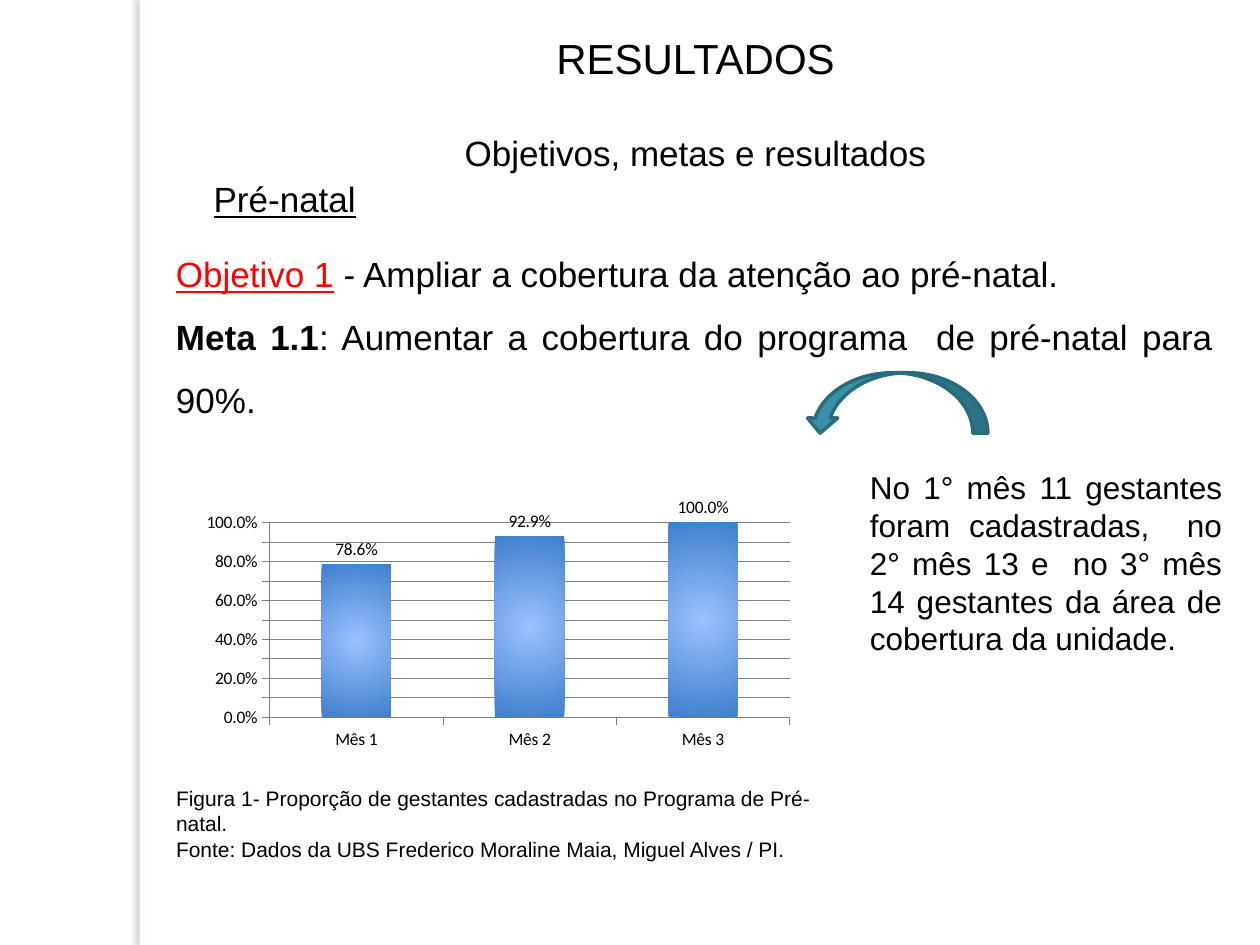
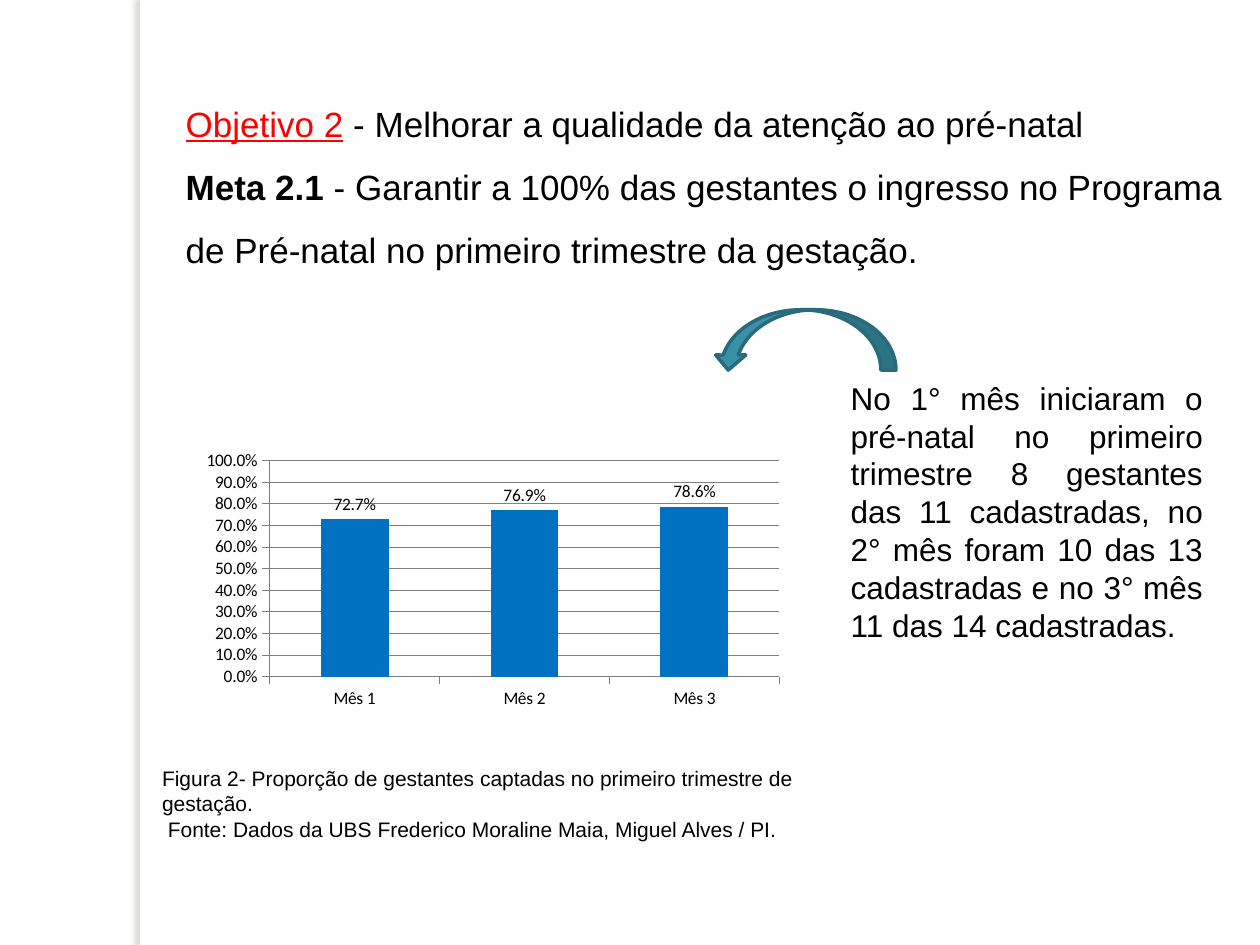
from dataclasses import dataclass

from lxml import etree
from pptx import Presentation
from pptx.chart.data import CategoryChartData
from pptx.dml.color import RGBColor
from pptx.enum.chart import XL_CHART_TYPE, XL_LABEL_POSITION, XL_TICK_MARK
from pptx.enum.shapes import MSO_SHAPE
from pptx.enum.text import MSO_AUTO_SIZE, PP_ALIGN
from pptx.oxml import parse_xml
from pptx.oxml.ns import nsdecls, qn
from pptx.util import Pt

LEFT, CENTER, JUSTIFY = PP_ALIGN.LEFT, PP_ALIGN.CENTER, PP_ALIGN.JUSTIFY
GROW = MSO_AUTO_SIZE.SHAPE_TO_FIT_TEXT
RECT, ARROW = MSO_SHAPE.RECTANGLE, MSO_SHAPE.CURVED_DOWN_ARROW
COLUMNS = XL_CHART_TYPE.COLUMN_CLUSTERED
LABEL_OUT = XL_LABEL_POSITION.OUTSIDE_END
TICK_OUT, TICK_NONE = XL_TICK_MARK.OUTSIDE, XL_TICK_MARK.NONE


@dataclass(frozen=True)
class Theme:
    """Colours, fonts and type sizes shared by the slides."""
    black: RGBColor = RGBColor(0, 0, 0)
    white: RGBColor = RGBColor(0xFF, 0xFF, 0xFF)
    red: RGBColor = RGBColor(0xFF, 0, 0)
    teal: RGBColor = RGBColor(0x38, 0x91, 0xA7)
    teal_dark: RGBColor = RGBColor(0x29, 0x6B, 0x7C)
    grid: RGBColor = RGBColor(0x80, 0x80, 0x80)
    bar: RGBColor = RGBColor(0, 0x70, 0xC0)
    bar_glow: tuple = ("9BC1FF", "3F80CD")
    shadow: str = "736F63"
    font: str = "Arial"
    chart_font: str = "Calibri"
    title: int = 24
    body: int = 20
    note: int = 18
    caption: int = 12
    chart: int = 10


T = Theme()
GOAL = {"underline": True, "color": T.red}
BOLD = {"bold": True}
SOURCE = "Fonte: Dados da UBS Frederico Moraline Maia, Miguel Alves / PI."
MONTHS = ("Mês 1", "Mês 2", "Mês 3")


def set_attrs(obj, fmt):
    """Set each attribute named in a dict of format values."""
    for name, value in fmt.items():
        setattr(obj, name, value)


def set_font(font, name, size, color=T.black, **fmt):
    """Set the face, size, colour and other values of a font."""
    set_attrs(font, {"name": name, "size": Pt(size), **fmt})
    font.color.rgb = color


def set_line(line, color, width):
    """Set the colour and width of a line."""
    line.color.rgb = color
    line.width = Pt(width)


def add_text(s, box, paragraphs, size, wrap=True, **fmt):
    """Add a text box whose paragraphs are lists of (text, format) runs."""
    tf = s.shapes.add_textbox(*map(Pt, box)).text_frame
    set_attrs(tf, {"word_wrap": wrap, "auto_size": GROW})
    for i, runs in enumerate(paragraphs):
        p = tf.add_paragraph() if i else tf.paragraphs[0]
        set_attrs(p, fmt)
        for text, run_fmt in runs:
            r = p.add_run()
            r.text = text
            set_font(r.font, T.font, **{"size": size, **run_fmt})
    return tf


def add_band_edge(s, box):
    """Add the white strip that throws a soft shadow to its left."""
    sp = s.shapes.add_shape(RECT, *map(Pt, box))
    sp.shadow.inherit = False
    sp.fill.solid()
    sp.fill.fore_color.rgb = T.white
    sp.line.fill.background()
    effects = sp._element.spPr.find(qn("a:effectLst"))
    shadow = etree.SubElement(effects, qn("a:outerShdw"), blurRad=str(Pt(3)),
                              dist=str(Pt(3)), dir="10800000", algn="tl", rotWithShape="0")
    color = etree.SubElement(shadow, qn("a:srgbClr"), val=T.shadow)
    etree.SubElement(color, qn("a:alpha"), val="25000")


def add_heading(s, box):
    """Add the section title with its subtitle and topic below."""
    x, y, w, h = box
    lines = [[("RESULTADOS", {"size": T.title})], [("Objetivos, metas e resultados", {})]]
    tf = add_text(s, box, lines, T.body, wrap=False, alignment=CENTER)
    tf.paragraphs[1].space_before = Pt(27.6)
    add_text(s, (x - 142.5, y + h - 6.5, 96.5, 31.5),
             [[("Pré-natal", {"underline": True})]], T.body, wrap=False)


def add_arrow(s, box):
    """Add the curved arrow that leads from the note to the chart."""
    sp = s.shapes.add_shape(ARROW, *map(Pt, box))
    sp.shadow.inherit = False
    sp.fill.solid()
    sp.fill.fore_color.rgb = T.teal
    set_line(sp.line, T.teal_dark, 2)
    sp._element.spPr.find(qn("a:xfrm")).set("flipH", "1")


def glow_fill(center, edge):
    """Return a gradient fill that darkens from its centre to its edges."""
    return parse_xml(
        f'<a:gradFill {nsdecls("a")} rotWithShape="1"><a:gsLst>'
        f'<a:gs pos="0"><a:srgbClr val="{center}"/></a:gs>'
        f'<a:gs pos="100000"><a:srgbClr val="{edge}"/></a:gs></a:gsLst>'
        '<a:path path="circle"><a:fillToRect l="50000" t="50000" r="50000" b="50000"/>'
        '</a:path></a:gradFill>')


def set_plot_area(chart, area):
    """Fix the inner plot area to fractions of the chart."""
    plot_area = chart._chartSpace.chart.plotArea
    for old in plot_area.findall(qn("c:layout")):
        plot_area.remove(old)
    layout = etree.Element(qn("c:layout"))
    manual = etree.SubElement(layout, qn("c:manualLayout"))
    values = [("layoutTarget", "inner"), ("xMode", "edge"), ("yMode", "edge")]
    for tag, value in values + list(zip("xywh", area)):
        etree.SubElement(manual, qn(f"c:{tag}"), val=str(value))
    plot_area.insert(0, layout)


def add_columns(s, box, values, area, glow):
    """Add the column chart of monthly proportions."""
    data = CategoryChartData(number_format="0.0%")
    data.categories = MONTHS
    data.add_series("Series 1", values)
    chart = s.shapes.add_chart(COLUMNS, *map(Pt, box), data).chart
    set_attrs(chart, {"has_title": False, "has_legend": False})
    set_font(chart.font, T.chart_font, T.chart)
    set_plot_area(chart, area)
    for axis in (chart.category_axis, chart.value_axis):
        set_attrs(axis, {"major_tick_mark": TICK_OUT, "minor_tick_mark": TICK_NONE})
        set_font(axis.tick_labels.font, T.chart_font, T.chart)
        set_line(axis.format.line, T.grid, 0.25)
    set_attrs(axis, {"minimum_scale": 0, "maximum_scale": 1, "major_unit": 0.1,
                     "has_major_gridlines": True})
    set_line(axis.major_gridlines.format.line, T.grid, 0.25)
    number = {"number_format": "0.0%", "number_format_is_linked": False}
    set_attrs(axis.tick_labels, number)
    plot = chart.plots[0]
    set_attrs(plot, {"gap_width": 150, "vary_by_categories": False, "has_data_labels": True})
    set_attrs(plot.data_labels, {**number, "show_value": True, "position": LABEL_OUT})
    set_font(plot.data_labels.font, T.chart_font, T.chart)
    series = plot.series[0]
    series.invert_if_negative = False
    fill = series.format.fill
    fill.solid()
    fill.fore_color.rgb = T.bar
    if glow:
        sppr = series._element.find(qn("c:spPr"))
        sppr.replace(sppr.find(qn("a:solidFill")), glow_fill(*T.bar_glow))


def add_result_slide(prs, goal, note, arrow, figure, caption, heading=None):
    """Add a slide with a goal, its chart and a note on the chart."""
    s = prs.slides.add_slide(prs.slide_layouts[6])
    add_band_edge(s, (80, 0, 6, 540))
    if heading:
        add_heading(s, heading)
    add_text(s, goal["box"], goal["lines"], T.body,
             alignment=goal["alignment"], line_spacing=1.5)
    add_text(s, caption["box"], [[(line, {})] for line in caption["lines"]], T.caption)
    add_text(s, note["box"], [[(note["text"], {})]], T.note, alignment=JUSTIFY)
    add_arrow(s, arrow)
    add_columns(s, **figure)


def main():
    """Build the two result slides and save them."""
    prs = Presentation()
    set_attrs(prs, {"slide_width": Pt(720), "slide_height": Pt(540)})
    add_result_slide(
        prs,
        heading=(257.5, 15, 280, 89.5),
        goal={"box": (93.5, 129, 607, 116.5), "alignment": JUSTIFY, "lines": [
            [("Objetivo 1", GOAL), (" - Ampliar a cobertura da atenção ao pré-natal.", {})],
            [("Meta 1.1", BOLD),
             (": Aumentar a cobertura do programa  de pré-natal para 90%.", {})]]},
        note={"box": (490, 264, 215.5, 116), "text":
              "No 1° mês 11 gestantes foram cadastradas,  no 2° mês 13 e  no 3° mês "
              "14 gestantes da área de cobertura da unidade."},
        arrow=(460, 213, 104.5, 34.5),
        figure={"box": (118, 258.5, 343.5, 174), "values": (0.786, 0.929, 1),
                "area": (0.1, 0.23, 0.87, 0.64), "glow": True},
        caption={"box": (93.5, 445.5, 377.5, 51), "lines": [
            "Figura 1- Proporção de gestantes cadastradas no Programa de Pré-natal.", SOURCE]})
    add_result_slide(
        prs,
        goal={"box": (99, 43, 607, 116), "alignment": LEFT, "lines": [
            [("Objetivo 2", GOAL), (" - Melhorar a qualidade da atenção ao pré-natal", {})],
            [("Meta 2.1", BOLD),
             (" - Garantir a 100% das gestantes o ingresso no Programa de Pré-natal "
              "no primeiro trimestre da gestação.", {})]]},
        note={"box": (479, 213, 215.5, 160), "text":
              "No 1° mês iniciaram o pré-natal no primeiro trimestre 8 gestantes das 11 "
              "cadastradas, no 2° mês foram 10 das 13 cadastradas e no 3° mês 11 das 14 "
              "cadastradas."},
        arrow=(407.5, 177, 104.5, 34.5),
        figure={"box": (118, 219.5, 337.5, 190), "values": (0.727, 0.769, 0.786),
                "area": (0.1, 0.23, 0.87, 0.65), "glow": False},
        caption={"box": (85.5, 434, 386, 51), "lines": [
            "Figura 2- Proporção de gestantes captadas no primeiro trimestre de gestação.",
            " " + SOURCE]})
    prs.save("out.pptx")


if __name__ == "__main__":
    main()
